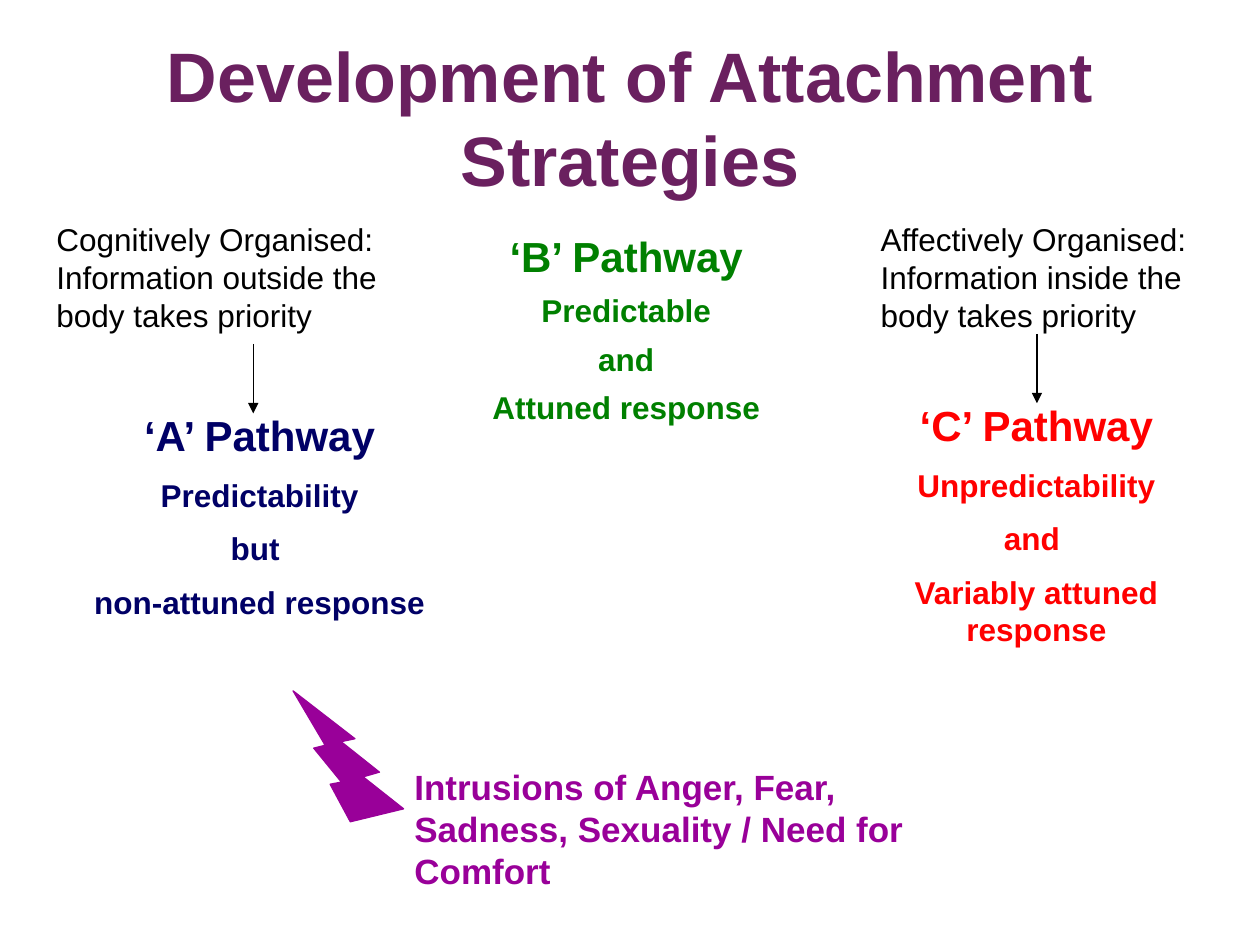
from dataclasses import dataclass

from lxml.etree import SubElement
from pptx import Presentation
from pptx.dml.color import RGBColor
from pptx.enum.shapes import MSO_CONNECTOR, MSO_SHAPE
from pptx.enum.text import MSO_ANCHOR, MSO_AUTO_SIZE, PP_ALIGN
from pptx.oxml.ns import qn
from pptx.util import Inches, Pt


@dataclass(frozen=True)
class Theme:
    font: str = "Arial"
    title: str = "6A205F"
    a: str = "000066"
    b: str = "008000"
    c: str = "FF0000"
    note: str = "000000"
    accent: str = "990099"
    title_size: int = 40
    heading_size: int = 24
    accent_size: int = 20
    body_size: int = 18
    line_width: float = 0.75


theme = Theme()
prs = Presentation()
prs.slide_width, prs.slide_height = Inches(10), Inches(7.5)
s = prs.slides.add_slide(prs.slide_layouts[5])

# Square grid: 100 columns by 75 rows
unit = prs.slide_width // 100


def grid(*cells):
    return [round(cell * unit) for cell in cells]


def write(sp, lines, sizes, color, bold=True, align=PP_ALIGN.CENTER, gap=0):
    tf = sp.text_frame
    tf.word_wrap = True
    tf.text = "\n".join(lines)
    for i, (p, size) in enumerate(zip(tf.paragraphs, sizes)):
        p.alignment = align
        p.space_before = Pt(gap if i else 0)
        for r in p.runs:
            r.font.name, r.font.size, r.font.bold = theme.font, Pt(size), bold
            r.font.color.rgb = RGBColor.from_string(color)


# Title
title = s.shapes.title
title.left, title.top, title.width, title.height = grid(5, 3, 90, 12.5)
write(title, ["Development of Attachment Strategies"], [theme.title_size], theme.title)
title.text_frame.vertical_anchor = MSO_ANCHOR.MIDDLE
title.text_frame.auto_size = MSO_AUTO_SIZE.NONE

# Pathways: place, colour, gap between lines, lines
pathways = [
    ((31.1, 17.8, 37.2, 16.7), theme.b, 6,
     ["‘B’ Pathway", "Predictable", "and", "Attuned response"]),
    ((2.7, 32, 35.8, 18.5), theme.a, 9,
     ["‘A’ Pathway", "Predictability", "but ", "non-attuned response"]),
    ((67.3, 31.2, 29.9, 21.5), theme.c, 9,
     ["‘C’ Pathway", "Unpredictability", "and ", "Variably attuned response"]),
]
for place, color, gap, lines in pathways:
    sp = s.shapes.add_textbox(*grid(*place))
    write(sp, lines, [theme.heading_size] + [theme.body_size] * 3, color, gap=gap)

# Notes above the outer pathways, and the intrusions label
notes = [
    ((3.5, 17, 28.4, 10), theme.note, theme.body_size, False,
     "Cognitively Organised: Information outside the body takes priority"),
    ((68.9, 17, 26.8, 10), theme.note, theme.body_size, False,
     "Affectively Organised: Information inside the body takes priority"),
    ((31.9, 60.3, 41.8, 11), theme.accent, theme.accent_size, True,
     "Intrusions of Anger, Fear, Sadness, Sexuality / Need for Comfort"),
]
for place, color, size, bold, text in notes:
    sp = s.shapes.add_textbox(*grid(*place))
    write(sp, [text], [size], color, bold, PP_ALIGN.LEFT)

# Arrows from the notes down to the pathways
for x, y in [(20.1, 27.3), (82.3, 26.5)]:
    arrow = s.shapes.add_connector(MSO_CONNECTOR.STRAIGHT, *grid(x, y, x, y + 5.5))
    arrow.line.color.rgb = RGBColor.from_string(theme.note)
    arrow.line.width = Pt(theme.line_width)
    SubElement(arrow.line._get_or_add_ln(), qn("a:tailEnd"), type="triangle")
    SubElement(arrow._element.spPr, qn("a:effectLst"))

# Lightning bolt
bolt = s.shapes.add_shape(MSO_SHAPE.LIGHTNING_BOLT, *grid(22.4, 55.6, 10.2, 9.5))
bolt.rotation = 189.5
bolt.shadow.inherit = False
bolt.fill.solid()
bolt.fill.fore_color.rgb = RGBColor.from_string(theme.accent)
bolt.line.color.rgb = RGBColor.from_string(theme.accent)
bolt.line.width = Pt(theme.line_width)

prs.save("out.pptx")
